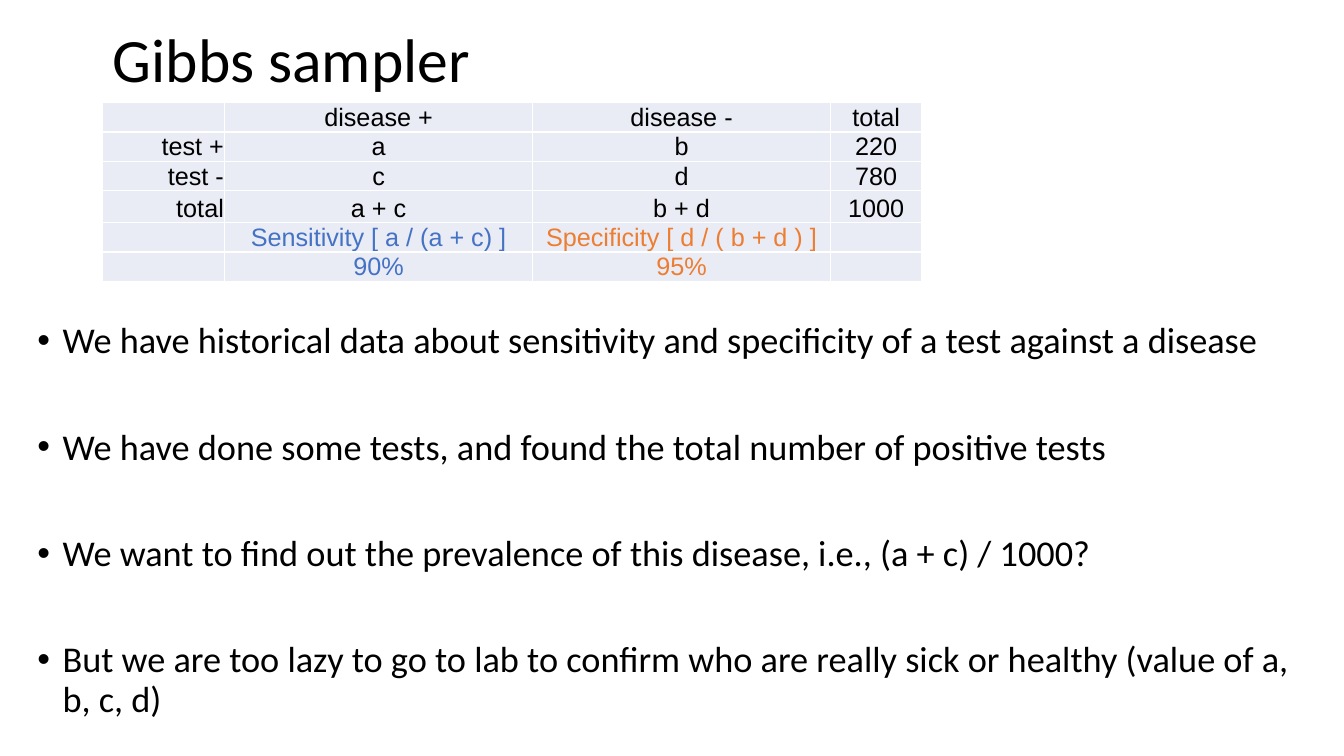
from dataclasses import dataclass

from lxml import etree
from pptx import Presentation
from pptx.dml.color import RGBColor
from pptx.enum.text import MSO_ANCHOR, MSO_AUTO_SIZE, PP_ALIGN
from pptx.oxml.ns import qn
from pptx.util import Inches, Pt

LEFT, CENTER, RIGHT = PP_ALIGN.LEFT, PP_ALIGN.CENTER, PP_ALIGN.RIGHT
MIDDLE, BOTTOM, TOP = MSO_ANCHOR.MIDDLE, MSO_ANCHOR.BOTTOM, MSO_ANCHOR.TOP
NO_FIT = MSO_AUTO_SIZE.NONE
TITLE_AND_CONTENT = 1
PAGE_WIDTH, PAGE_HEIGHT = 13.33, 7.5


@dataclass(frozen=True)
class Theme:
    text_font: str = "Calibri"
    table_font: str = "Arial"
    title_size: float = 44
    body_size: float = 25.9
    table_size: float = 18
    empty_cell_size: float = 10
    ink: str = "000000"
    sensitivity: str = "4472C4"
    specificity: str = "ED7D31"
    cell_fill: str = "E9EBF5"


THEME = Theme()

TITLE = "Gibbs sampler"
POINTS = [
    "We have historical data about sensitivity and specificity of a test against a disease",
    "We have done some tests, and found the total number of positive tests",
    "We want to find out the prevalence of this disease, i.e., (a + c) / 1000?",
    "But we are too lazy to go to lab to confirm who are really sick or healthy "
    "(value of a, b, c, d)",
]
TEST_RESULTS = [
    ["", "disease +", "disease -", "total"],
    ["test +", "a", "b", "220"],
    ["test -", "c", "d", "780"],
    ["total", "a + c", "b + d", "1000"],
    ["", "Sensitivity [ a / (a + c) ]", "Specificity [ d / ( b + d ) ]", ""],
    ["", "90%", "95%", ""],
]
COLUMN_WIDTHS = [1.21, 3.05, 2.96, 0.9]
ROW_HEIGHTS = [0.25, 0.25, 0.25, 0.32, 0.25, 0.25]
FIRST_RATE_ROW = 4
RATE_COLORS = {1: THEME.sensitivity, 2: THEME.specificity}


def place(shape, left, top, width, height):
    """Position a shape by shares of the page size."""
    shape.left, shape.width = (Inches(share * PAGE_WIDTH) for share in (left, width))
    shape.top, shape.height = (Inches(share * PAGE_HEIGHT) for share in (top, height))


def format_runs(para, font, size, color):
    for span in para.runs:
        span.font.name = font
        span.font.size = Pt(size)
        span.font.color.rgb = RGBColor.from_string(color)


def set_bullet(para, indent):
    properties = para._p.get_or_add_pPr()
    properties.set("marL", str(Inches(indent)))
    properties.set("indent", str(-Inches(indent)))
    etree.SubElement(properties, qn("a:buFont")).set("typeface", "Arial")
    etree.SubElement(properties, qn("a:buChar")).set("char", "•")


def fill_title(box):
    place(box, 0.0765, 0.0027, 0.8627, 0.16)
    frame = box.text_frame
    frame.text = TITLE
    frame.auto_size = NO_FIT
    frame.vertical_anchor = MIDDLE
    para = frame.paragraphs[0]
    para.alignment = LEFT
    para.line_spacing = 0.9
    format_runs(para, THEME.text_font, THEME.title_size, THEME.ink)


def fill_points(box):
    place(box, 0.0203, 0.42, 0.96, 0.55)
    frame = box.text_frame
    frame.text = "\n".join(POINTS)
    frame.auto_size = NO_FIT
    frame.vertical_anchor = TOP
    for para in frame.paragraphs:
        para.line_spacing = 0.9
        para.space_before = Pt(0)
        para.space_after = Pt(48)
        set_bullet(para, 0.25)
        format_runs(para, THEME.text_font, THEME.body_size, THEME.ink)


def fill_cell(cell, text, alignment, color):
    cell.fill.solid()
    cell.fill.fore_color.rgb = RGBColor.from_string(THEME.cell_fill)
    cell.vertical_anchor = BOTTOM
    cell.margin_left = cell.margin_right = cell.margin_top = Inches(0.01)
    cell.margin_bottom = 0
    para = cell.text_frame.paragraphs[0]
    if text:
        para.text = text
        para.alignment = alignment
        format_runs(para, THEME.table_font, THEME.table_size, color)
    else:
        # A small end mark keeps an empty cell from stretching its row.
        end_mark = etree.SubElement(para._p, qn("a:endParaRPr"))
        end_mark.set("sz", str(int(THEME.empty_cell_size * 100)))


def add_results_table(page):
    frame = page.shapes.add_table(
        len(ROW_HEIGHTS), len(COLUMN_WIDTHS), Inches(1.02), Inches(1.02),
        Inches(sum(COLUMN_WIDTHS)), Inches(sum(ROW_HEIGHTS)))
    table = frame.table
    table.first_row = table.horz_banding = False
    for column, width in zip(table.columns, COLUMN_WIDTHS):
        column.width = Inches(width)
    for row, height in zip(table.rows, ROW_HEIGHTS):
        row.height = Inches(height)
    for row_index, texts in enumerate(TEST_RESULTS):
        for column_index, text in enumerate(texts):
            is_rate = row_index >= FIRST_RATE_ROW
            color = RATE_COLORS.get(column_index, THEME.ink) if is_rate else THEME.ink
            alignment = CENTER if column_index else RIGHT
            fill_cell(table.cell(row_index, column_index), text, alignment, color)


def main():
    deck = Presentation()
    deck.slide_width, deck.slide_height = Inches(PAGE_WIDTH), Inches(PAGE_HEIGHT)
    page = deck.slides.add_slide(deck.slide_layouts[TITLE_AND_CONTENT])
    fill_title(page.shapes.title)
    add_results_table(page)
    fill_points(page.placeholders[1])
    deck.save("out.pptx")


if __name__ == "__main__":
    main()
